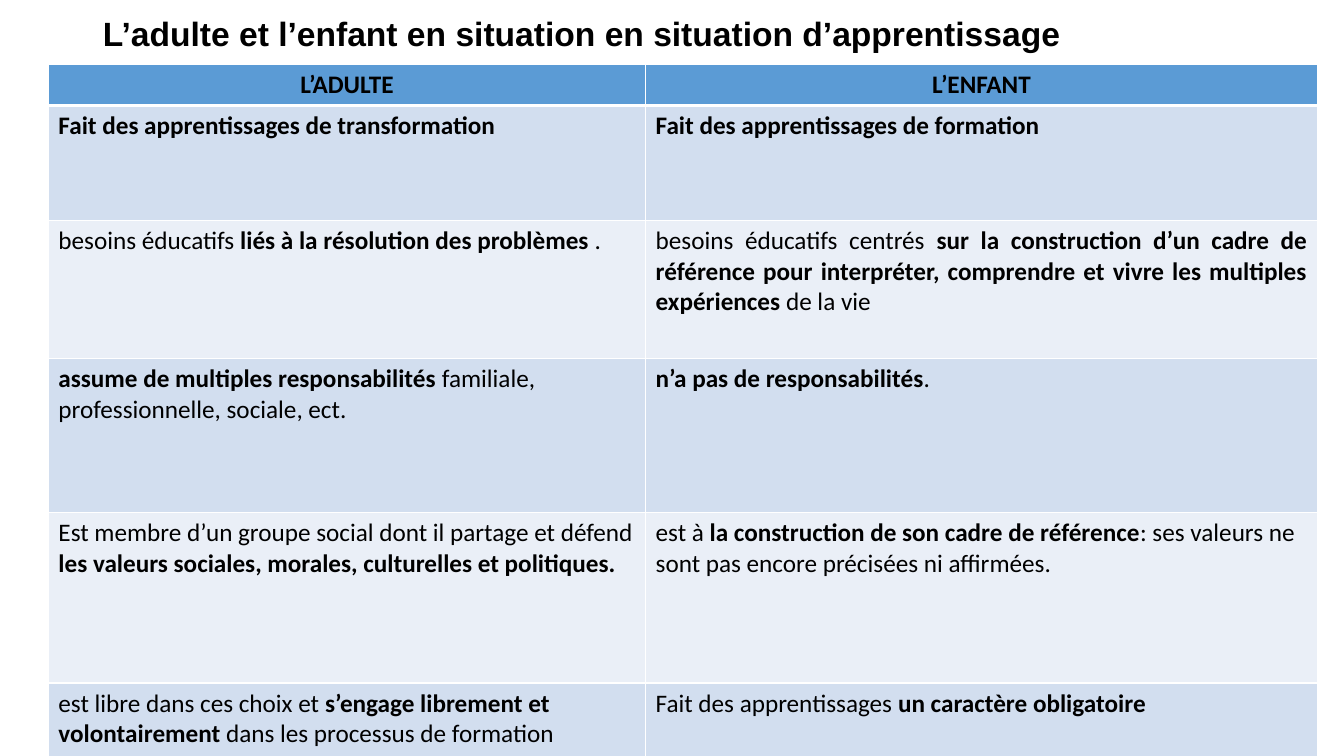
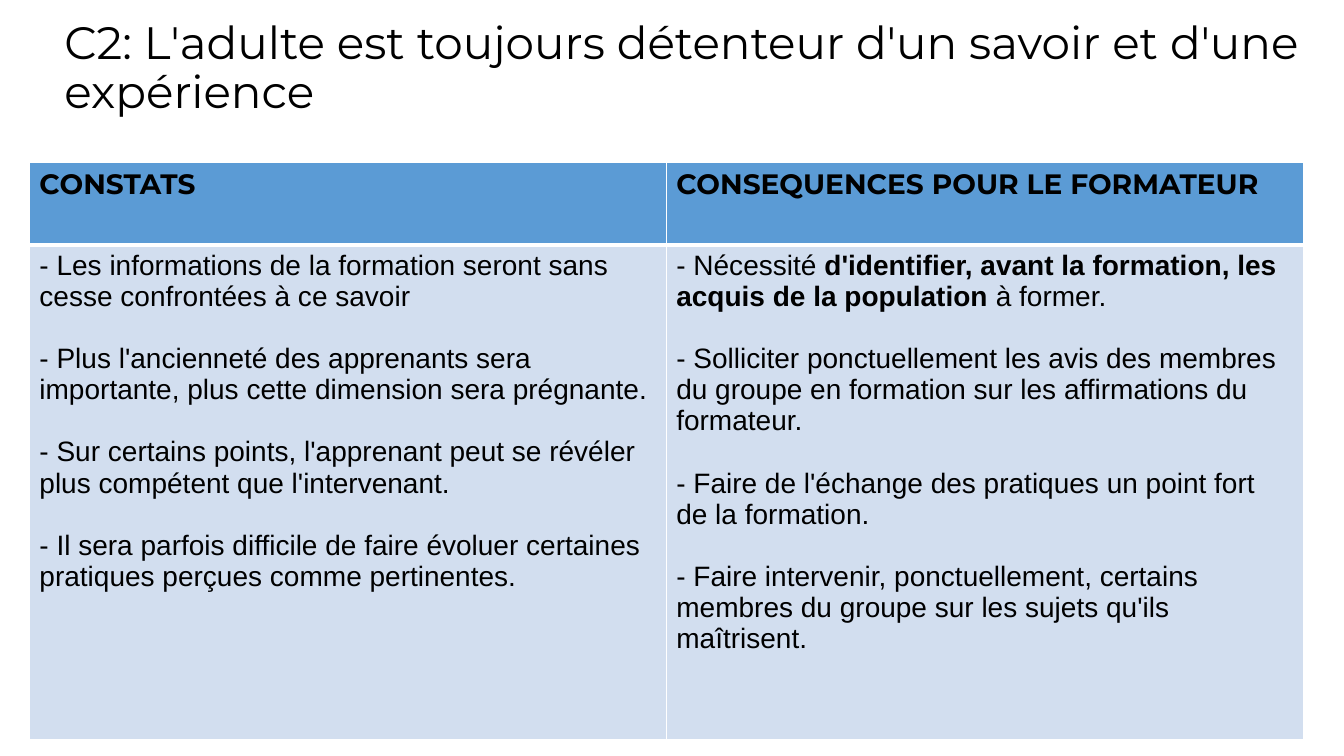
from lxml import etree
from pptx import Presentation
from pptx.dml.color import RGBColor
from pptx.enum.text import MSO_ANCHOR, MSO_AUTO_SIZE, PP_ALIGN
from pptx.oxml.ns import qn
from pptx.util import Cm, Pt

LEFT, MID, JUST = PP_ALIGN.LEFT, PP_ALIGN.CENTER, PP_ALIGN.JUSTIFY
CENTRE = MSO_ANCHOR.MIDDLE
FIXED = MSO_AUTO_SIZE.NONE
TITLE_ONLY = 5

BLACK = RGBColor(0x00, 0x00, 0x00)
WHITE = RGBColor(0xFF, 0xFF, 0xFF)
BLUE = RGBColor(0x5B, 0x9B, 0xD5)
BANDS = (RGBColor(0xD2, 0xDE, 0xEF), RGBColor(0xEA, 0xEF, 0xF7))

LEARNERS = [
    ("L’ADULTE", "L’ENFANT"),
    ("**Fait des apprentissages de transformation**",
     "**Fait des apprentissages de formation**"),
    ("besoins éducatifs **liés à la résolution des problèmes **.",
     "besoins éducatifs centrés **sur la construction d’un cadre de référence "
     "pour interpréter, comprendre et vivre les multiples expériences** de la vie"),
    ("**assume de multiples responsabilités** familiale, professionnelle, "
     "sociale, ect.",
     "**n’a pas de responsabilités**."),
    ("Est membre d’un groupe social dont il partage et défend **les valeurs "
     "sociales, morales, culturelles et politiques.**",
     "est à **la construction de son cadre de référence**: ses valeurs ne sont "
     "pas encore précisées ni affirmées."),
    ("est libre dans ces choix et **s’engage librement et volontairement** dans "
     "les processus de formation",
     "Fait des apprentissages **un caractère obligatoire**"),
]

FACTS = [
    ("CONSTATS", "CONSEQUENCES POUR LE FORMATEUR"),
    ("- Les informations de la formation seront sans cesse confrontées à ce savoir\n"
     "- Plus l'ancienneté des apprenants sera importante, plus cette dimension "
     "sera prégnante.\n"
     "- Sur certains points, l'apprenant peut se révéler plus compétent que "
     "l'intervenant.\n"
     "- Il sera parfois difficile de faire évoluer certaines pratiques perçues "
     "comme pertinentes.",
     "- Nécessité **d'identifier, avant la formation, les acquis de la "
     "population **à former.\n"
     "- Solliciter ponctuellement les avis des membres du groupe en formation "
     "sur les affirmations du formateur.\n"
     "- Faire de l'échange des pratiques un point fort de la formation.\n"
     "- Faire intervenir, ponctuellement, certains membres du groupe sur les "
     "sujets qu'ils maîtrisent."),
]


def write(frame, text, font, size, bold=False, align=LEFT, gap=0, line=1.0):
    """Write one paragraph per line of text; ** switches bold on and off."""
    for row, part in enumerate(text.split("\n")):
        para = frame.add_paragraph() if row else frame.paragraphs[0]
        para.alignment = align
        para.line_spacing = line
        para.space_before = Pt(gap if row else 0)
        for turn, piece in enumerate(part.split("**")):
            if not piece:
                continue
            run = para.add_run()
            run.text = piece
            run.font.name = font
            run.font.size = Pt(size)
            run.font.bold = bold or turn % 2 == 1
            run.font.color.rgb = BLACK


def add_page(deck, text, box, **style):
    """Add a slide with its title placed in box."""
    slide = deck.slides.add_slide(deck.slide_layouts[TITLE_ONLY])
    title = slide.shapes.title
    title.left, title.top, title.width, title.height = map(Cm, box)
    frame = title.text_frame
    frame.word_wrap = True
    frame.auto_size = FIXED
    frame.vertical_anchor = CENTRE
    write(frame, text, line=0.9, **style)
    return slide


def set_edges(cell, top, base):
    """Draw white cell borders, with top and base widths in points."""
    props = cell._tc.get_or_add_tcPr()
    for side, width in (("L", 1), ("R", 1), ("T", top), ("B", base)):
        edge = etree.SubElement(props, qn("a:ln" + side), w=str(Pt(width)))
        fill = etree.SubElement(edge, qn("a:solidFill"))
        etree.SubElement(fill, qn("a:srgbClr"), val=str(WHITE))


def add_grid(slide, data, spot, cols, rows, head, body, just=()):
    """Add a table; head and body hold text formats, just the justified rows."""
    left, top = spot
    shape = slide.shapes.add_table(len(rows), len(cols), Cm(left), Cm(top),
                                   Cm(sum(cols)), Cm(sum(rows)))
    table = shape.table
    for col, width in zip(table.columns, cols):
        col.width = Cm(width)
    for row, height in zip(table.rows, rows):
        row.height = Cm(height)
    for r, texts in enumerate(data):
        style = body if r else head
        if r in just:
            style = {**style, "align": JUST}
        for c, text in enumerate(texts):
            cell = table.cell(r, c)
            set_edges(cell, 3 if r == 1 else 1, 1 if r else 3)
            cell.fill.solid()
            cell.fill.fore_color.rgb = BANDS[(r - 1) % 2] if r else BLUE
            write(cell.text_frame, text, **style)


def main():
    deck = Presentation()
    deck.slide_width, deck.slide_height = Cm(33.87), Cm(19.05)

    slide = add_page(
        deck, "L’adulte et l’enfant en situation en situation d’apprentissage",
        (2.34, -0.3, 30.89, 2.39), font="Arial", size=24, bold=True)
    text = {"font": "Calibri", "size": 18}
    add_grid(slide, LEARNERS, (1.22, 1.63), (15.05, 16.93),
             (1, 2.89, 3.48, 3.88, 4.3, 2.89),
             head={**text, "bold": True, "align": MID}, body=text, just=(2,))

    slide = add_page(
        deck, "C2: L'adulte est toujours détenteur d'un savoir et d'une expérience",
        (1.37, 0, 31.72, 3.5), font="Montserrat", size=32.4)
    add_grid(slide, FACTS, (0.74, 4.09), (16.05, 16.05), (2.08, 12.47),
             head={"font": "Montserrat", "size": 20, "bold": True},
             body={"font": "Arial", "size": 20, "gap": 22})

    deck.save("out.pptx")


if __name__ == "__main__":
    main()
